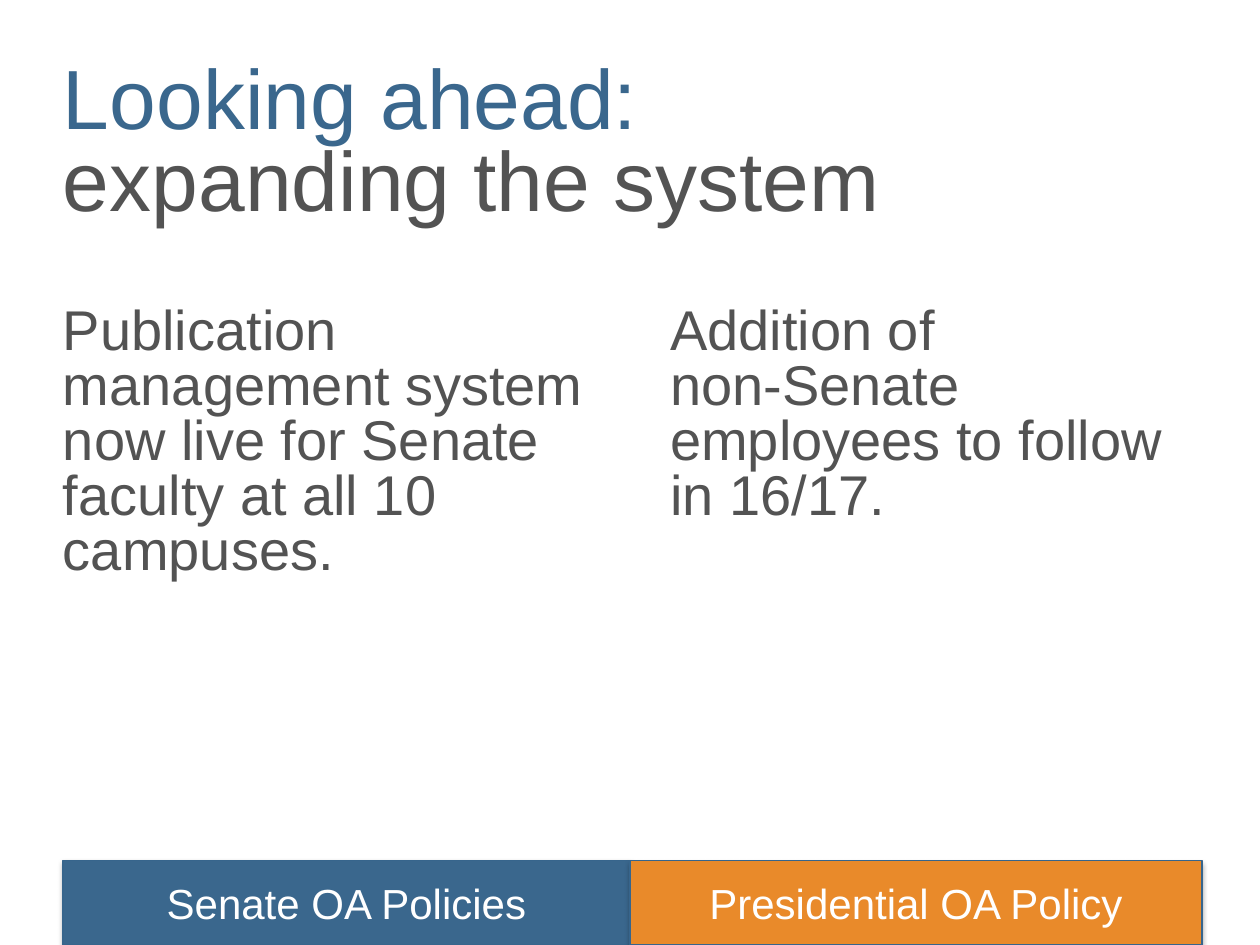
import dataclasses

import lxml.etree
import pptx
import pptx.dml.color
import pptx.enum.shapes
import pptx.enum.text
import pptx.oxml.ns
import pptx.util

Cm = pptx.util.Cm
Pt = pptx.util.Pt


@dataclasses.dataclass(frozen=True)
class Theme:
    font: str = "Arial"
    blue: str = "3A678D"
    gray: str = "535353"
    orange: str = "E98A2A"
    white: str = "FFFFFF"
    outline: str = "37658C"
    shadow: str = "000000"
    title_size: int = 48
    body_size: int = 32
    banner_size: int = 24
    line_spacing: float = 0.82


THEME = Theme()


def rgb(value):
    return pptx.dml.color.RGBColor.from_string(value)


def add_span(para, text, size, color):
    span = para.add_run()
    span.text = text
    span.font.name = THEME.font
    span.font.size = Pt(size)
    span.font.color.rgb = rgb(color)


def add_text(page, left, top, width, height, size, lines):
    box = page.shapes.add_textbox(Cm(left), Cm(top), Cm(width), Cm(height))
    frame = box.text_frame
    frame.word_wrap = True
    frame.auto_size = pptx.enum.text.MSO_AUTO_SIZE.SHAPE_TO_FIT_TEXT
    frame.margin_left = frame.margin_right = 0
    frame.margin_top = frame.margin_bottom = 0
    para = frame.paragraphs[0]
    para.line_spacing = THEME.line_spacing
    for index, (text, color) in enumerate(lines):
        if index:
            para.add_line_break()
        add_span(para, text, size, color)


def add_shadow(shape):
    shape.shadow.inherit = False
    qn = pptx.oxml.ns.qn
    effects = shape._element.spPr.find(qn("a:effectLst"))
    outer = lxml.etree.SubElement(
        effects, qn("a:outerShdw"),
        blurRad=str(Pt(3.1)), dist=str(Pt(1.8)), dir="5400000", rotWithShape="0")
    color = lxml.etree.SubElement(outer, qn("a:srgbClr"), val=THEME.shadow)
    lxml.etree.SubElement(color, qn("a:alpha"), val="35000")


def add_banner(page, left, width, text, fill):
    banner = page.shapes.add_shape(
        pptx.enum.shapes.MSO_SHAPE.RECTANGLE, Cm(left), Cm(17.35), Cm(width), Cm(1.7))
    banner.fill.solid()
    banner.fill.fore_color.rgb = rgb(fill)
    banner.line.color.rgb = rgb(THEME.outline)
    banner.line.width = Pt(0.75)
    add_shadow(banner)
    frame = banner.text_frame
    frame.word_wrap = True
    frame.vertical_anchor = pptx.enum.text.MSO_ANCHOR.MIDDLE
    para = frame.paragraphs[0]
    para.alignment = pptx.enum.text.PP_ALIGN.CENTER
    add_span(para, text, THEME.banner_size, THEME.white)


def main():
    deck = pptx.Presentation()
    deck.slide_width, deck.slide_height = Cm(25.4), Cm(19.05)
    page = deck.slides.add_slide(deck.slide_layouts[6])

    add_text(page, 1.27, 1.27, 22.96, 3.35, THEME.title_size,
             [("Looking ahead: ", THEME.blue), ("expanding the system", THEME.gray)])
    add_text(page, 1.27, 6.17, 10.67, 5.61, THEME.body_size,
             [("Publication management system now live for Senate faculty "
               "at all 10 campuses.", THEME.gray)])
    add_text(page, 13.51, 6.17, 10.62, 4.5, THEME.body_size,
             [("Addition of ", THEME.gray),
              ("non-Senate employees to follow in 16/17.", THEME.gray)])

    add_banner(page, 1.27, 11.43, "Senate OA Policies", THEME.blue)
    add_banner(page, 12.7, 11.53, "Presidential OA Policy", THEME.orange)

    deck.save("out.pptx")


if __name__ == "__main__":
    main()
